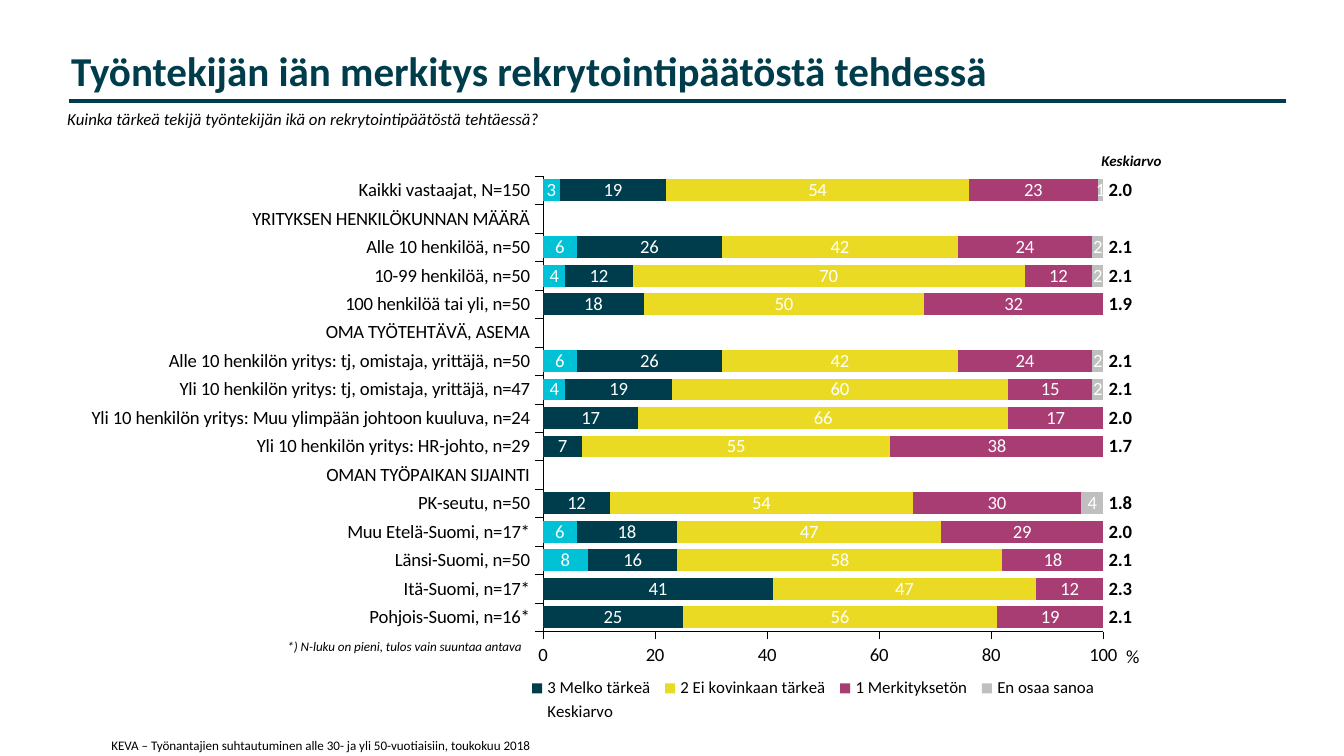
from dataclasses import dataclass

from lxml import etree
from pptx import Presentation
from pptx.chart.data import CategoryChartData
from pptx.dml.color import RGBColor
from pptx.enum.chart import (XL_CHART_TYPE, XL_LABEL_POSITION,
                             XL_LEGEND_POSITION, XL_TICK_MARK)
from pptx.enum.shapes import MSO_CONNECTOR
from pptx.enum.text import MSO_ANCHOR, MSO_AUTO_SIZE, PP_ALIGN
from pptx.oxml.ns import qn
from pptx.util import Inches, Pt

STACKED = XL_CHART_TYPE.BAR_STACKED
BASE = XL_LABEL_POSITION.INSIDE_BASE
BELOW = XL_LEGEND_POSITION.BOTTOM
OUT, NO_TICK = XL_TICK_MARK.OUTSIDE, XL_TICK_MARK.NONE
STRAIGHT = MSO_CONNECTOR.STRAIGHT
TOP, BOTTOM = MSO_ANCHOR.TOP, MSO_ANCHOR.BOTTOM
GROW, FIXED = MSO_AUTO_SIZE.SHAPE_TO_FIT_TEXT, MSO_AUTO_SIZE.NONE
LEFT, CENTER, RIGHT = PP_ALIGN.LEFT, PP_ALIGN.CENTER, PP_ALIGN.RIGHT


@dataclass(frozen=True)
class Theme:
    font: str = "Calibri"
    ink: str = "000000"
    white: str = "FFFFFF"
    navy: str = "003D4C"
    bars: tuple = ("00C1D5", "003D4C", "EADA23", "A83D73", "BFBFBF")
    title: int = 22
    body: int = 10
    small: int = 9
    head: int = 8
    note: int = 7


# Chart data: label, shares from "very important" to "cannot say", mean
NAMES = ("4 Erittäin tärkeä", "3 Melko tärkeä", "2 Ei kovinkaan tärkeä",
         "1 Merkityksetön", "En osaa sanoa", "Keskiarvo")
GAP = (None,) * len(NAMES)
ROWS = (
    ("Kaikki vastaajat, N=150", (3, 19, 54, 23, 1, 2)),
    ("YRITYKSEN HENKILÖKUNNAN MÄÄRÄ", GAP),
    ("Alle 10 henkilöä, n=50", (6, 26, 42, 24, 2, 2.1)),
    ("10-99 henkilöä, n=50", (4, 12, 70, 12, 2, 2.1)),
    ("100 henkilöä tai yli, n=50", (None, 18, 50, 32, None, 1.9)),
    ("OMA TYÖTEHTÄVÄ, ASEMA", GAP),
    ("Alle 10 henkilön yritys: tj, omistaja, yrittäjä, n=50", (6, 26, 42, 24, 2, 2.1)),
    ("Yli 10 henkilön yritys: tj, omistaja, yrittäjä, n=47", (4, 19, 60, 15, 2, 2.1)),
    ("Yli 10 henkilön yritys: Muu ylimpään johtoon kuuluva, n=24",
     (None, 17, 66, 17, None, 2)),
    ("Yli 10 henkilön yritys: HR-johto, n=29", (None, 7, 55, 38, None, 1.7)),
    ("OMAN TYÖPAIKAN SIJAINTI", GAP),
    ("PK-seutu, n=50", (None, 12, 54, 30, 4, 1.8)),
    ("Muu Etelä-Suomi, n=17*", (6, 18, 47, 29, None, 2)),
    ("Länsi-Suomi, n=50", (8, 16, 58, 18, None, 2.1)),
    ("Itä-Suomi, n=17*", (None, 41, 47, 12, None, 2.3)),
    ("Pohjois-Suomi, n=16*", (None, 25, 56, 19, None, 2.1)),
)


def color(code):
    return RGBColor.from_string(code)


def layout(box, frame, inner=False):
    """Manual layout of a box, in inches from the corner of the chart frame."""
    wide, high = frame[2:]
    root = etree.Element(qn("c:layout"))
    man = etree.SubElement(root, qn("c:manualLayout"))
    parts = [("layoutTarget", "inner")] if inner else []
    parts += [("xMode", "edge"), ("yMode", "edge")]
    parts += [(tag, part / full)
              for tag, part, full in zip("xywh", box, (wide, high, wide, high))]
    for tag, val in parts:
        etree.SubElement(man, qn(f"c:{tag}")).set("val", str(val))
    return root


class Page:
    def __init__(self, slide, theme):
        self.slide, self.theme = slide, theme

    def style(self, font, size, code, bold=False, italic=False):
        font.name, font.size = self.theme.font, Pt(size)
        font.color.rgb = color(code)
        font.bold, font.italic = bold, italic

    def text(self, box, words, size, code=None, bold=False, italic=False,
             align=LEFT, anchor=TOP, wrap=False, grow=True, tight=False):
        frame = self.slide.shapes.add_textbox(*map(Inches, box)).text_frame
        frame.word_wrap = wrap
        frame.auto_size = GROW if grow else FIXED
        frame.vertical_anchor = anchor
        if tight:
            frame.margin_left = frame.margin_right = Inches(0.07)
            frame.margin_top = frame.margin_bottom = Inches(0.04)
        frame.text = words
        para = frame.paragraphs[0]
        para.alignment = align
        self.style(para.runs[0].font, size, code or self.theme.ink, bold, italic)

    def line(self, x1, y1, x2, y2, code, width):
        line = self.slide.shapes.add_connector(STRAIGHT, *map(Inches, (x1, y1, x2, y2)))
        line.line.color.rgb = color(code)
        line.line.width = Pt(width)
        etree.SubElement(line._element.spPr, qn("a:effectLst"))

    def axis(self, axis):
        axis.has_major_gridlines = False
        axis.major_tick_mark, axis.minor_tick_mark = OUT, NO_TICK
        axis.format.line.color.rgb = color(self.theme.ink)
        axis.format.line.width = Pt(0.25)

    def labels(self, series, code, bold=False):
        labels = series.data_labels
        labels.show_value = True
        self.style(labels.font, self.theme.body, code, bold)
        return labels

    def legend(self, chart, place, hide):
        chart.has_legend = True
        legend = chart.legend
        legend.position = BELOW
        legend.include_in_layout = False
        self.style(legend.font, self.theme.small, self.theme.ink)
        entry = etree.Element(qn("c:legendEntry"))
        etree.SubElement(entry, qn("c:idx")).set("val", str(hide))
        etree.SubElement(entry, qn("c:delete")).set("val", "1")
        pos = legend._element.find(qn("c:legendPos"))
        for old in legend._element.findall(qn("c:layout")):
            legend._element.remove(old)
        pos.addnext(place)
        pos.addnext(entry)

    def chart(self, box, names, rows, plot_box, key_box):
        data = CategoryChartData()
        data.categories = [label for label, _ in rows]
        for name, vals in zip(names, zip(*(vals for _, vals in rows))):
            data.add_series(name, vals)
        chart = self.slide.shapes.add_chart(STACKED, *map(Inches, box), data).chart
        chart.has_title = False
        self.style(chart.font, self.theme.body, self.theme.ink)

        # Axes: first category on top, scale at the bottom
        cats, scale = chart.category_axis, chart.value_axis
        self.axis(cats)
        self.axis(scale)
        cats.reverse_order = True
        scale._element.find(qn("c:crosses")).set("val", "max")
        scale.minimum_scale, scale.maximum_scale, scale.major_unit = 0, 100, 20

        # Bars, then the means as labels of an unfilled series
        plot = chart.plots[0]
        plot.gap_width, plot.overlap, plot.vary_by_categories = 30, 100, False
        *bars, mean = plot.series
        for bar, code in zip(bars, self.theme.bars):
            bar.format.fill.solid()
            bar.format.fill.fore_color.rgb = color(code)
            self.labels(bar, self.theme.white)
        mean.format.fill.background()
        labels = self.labels(mean, self.theme.ink, bold=True)
        labels.position = BASE
        labels.number_format = "#,##0.0"
        labels.number_format_is_linked = False

        # Plot area and legend
        area = chart._chartSpace.chart.plotArea
        for old in area.findall(qn("c:layout")):
            area.remove(old)
        area.insert(0, layout(plot_box, box, inner=True))
        self.legend(chart, layout(key_box, box), hide=len(bars))


def main():
    deck = Presentation()
    deck.slide_width = Inches(10)
    deck.slide_height = deck.slide_width * 9 // 16
    theme = Theme()
    page = Page(deck.slides.add_slide(deck.slide_layouts[6]), theme)

    # Chart
    page.chart((0, 0.79, 9.78, 4.79), NAMES, ROWS,
               (4.04, 0.52, 4.17, 3.39), (3.89, 4.23, 4.32, 0.38))
    page.text((8.31, 4.76, 0.26, 0.25), "%", theme.body, wrap=True, tight=True)

    # Heading
    page.line(0.51, 0.75, 9.57, 0.75, theme.navy, 2.25)
    page.text((0.43, 0.29, 7.09, 0.47),
              "Työntekijän iän merkitys rekrytointipäätöstä tehdessä",
              theme.title, theme.navy, bold=True)
    page.text((0.43, 0.77, 3.72, 0.23),
              "Kuinka tärkeä tekijä työntekijän ikä on rekrytointipäätöstä tehtäessä?",
              theme.small, italic=True, tight=True)

    # Notes
    page.text((0.73, 5.35, 3.72, 0.3),
              "KEVA – Työnantajien suhtautuminen alle 30- ja yli 50-vuotiaisiin, toukokuu 2018",
              theme.note, anchor=BOTTOM, wrap=True, grow=False)
    page.text((8.09, 1.08, 0.66, 0.24), "Keskiarvo", theme.head,
              bold=True, italic=True, align=CENTER)
    page.text((1.93, 4.7, 2.05, 0.22), "*) N-luku on pieni, tulos vain suuntaa antava",
              theme.note, italic=True, align=RIGHT, wrap=True)

    deck.save("out.pptx")


if __name__ == "__main__":
    main()
